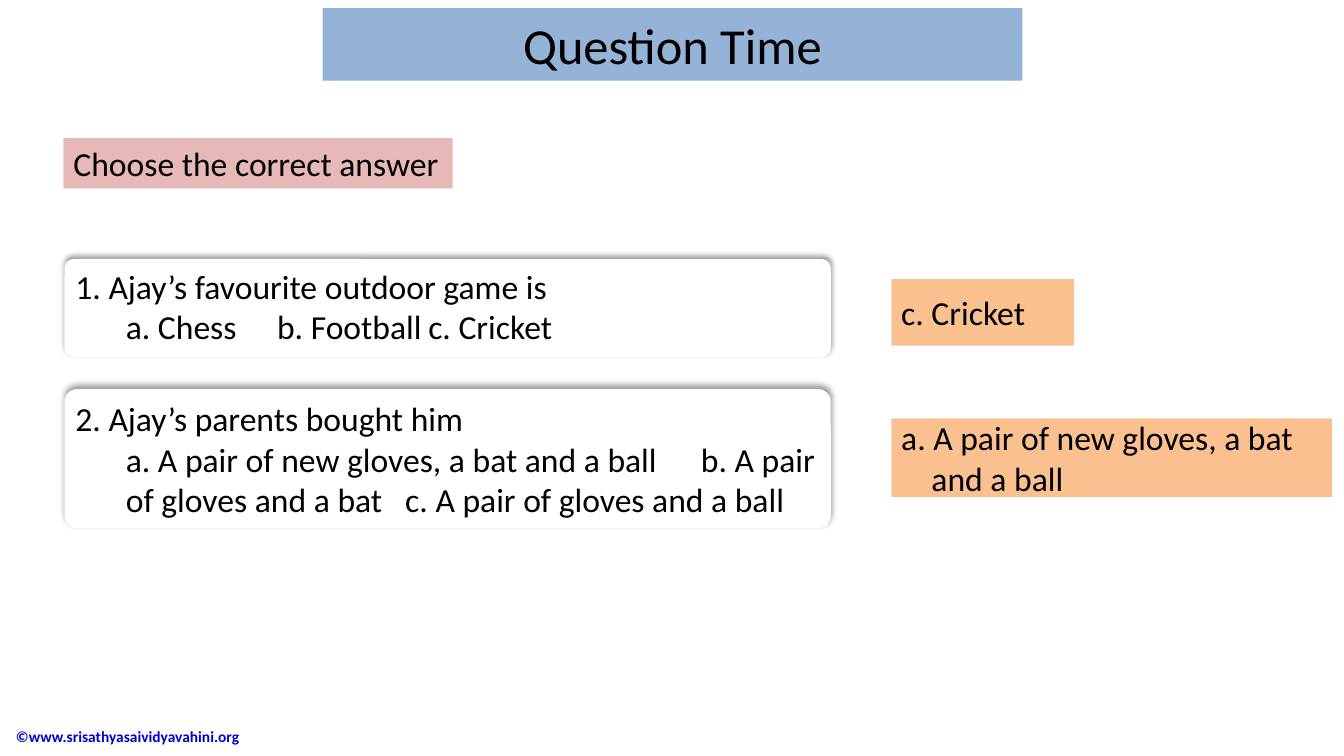
from lxml.etree import SubElement
from pptx import Presentation
from pptx.dml.color import RGBColor
from pptx.enum.shapes import MSO_SHAPE
from pptx.enum.text import MSO_ANCHOR, PP_ALIGN
from pptx.oxml import parse_xml
from pptx.oxml.ns import nsdecls, qn
from pptx.util import Inches, Pt

deck = Presentation()
deck.slide_width, deck.slide_height = Inches(13.33), Inches(7.5)
slide = deck.slides.add_slide(deck.slide_layouts[6])


def panel(shapes, kind, box, fill):
    shape = shapes.add_shape(kind, *map(Inches, box))
    shape.shadow.inherit = False
    shape.fill.solid()
    shape.fill.fore_color.rgb = RGBColor.from_string(fill)
    shape.line.fill.background()
    return shape


def style(shape, size, color, anchor, indents, wrap=True):
    frame = shape.text_frame
    frame.word_wrap = wrap
    frame.vertical_anchor = anchor
    for par, (left, first) in zip(frame.paragraphs, indents):
        par.alignment = PP_ALIGN.LEFT
        props = par._p.get_or_add_pPr()
        props.set("marL", str(Inches(left)))
        props.set("indent", str(Inches(first)))
        for run in par.runs:
            run.font.name = "Calibri"
            run.font.size = Pt(size)
            run.font.color.rgb = RGBColor.from_string(color)


hang = (0.5, -0.5)

footer = slide.shapes.add_textbox(*map(Inches, (-0.44, 7.1, 4.03, 0.41)))
footer.text_frame.text = "©www.srisathyasaividyavahini.org"
style(footer, 11, "0000CC", MSO_ANCHOR.MIDDLE, [(0.5, 0)])
footer.text_frame.paragraphs[0].runs[0].font.bold = True

title = panel(slide.shapes, MSO_SHAPE.RECTANGLE, (3.2, 0.08, 6.94, 0.72), "95B3D7")
title.text_frame.text = "Question Time"
style(title, 36, "000000", MSO_ANCHOR.MIDDLE, [(0, 0)])
title.text_frame.paragraphs[0].alignment = PP_ALIGN.CENTER

task = panel(slide.shapes, MSO_SHAPE.RECTANGLE, (0.63, 1.37, 3.86, 0.5), "E6B9B8")
task.text_frame.text = "Choose the correct answer"
style(task, 24, "000000", MSO_ANCHOR.TOP, [(0, 0)], wrap=False)

cards = [
    ((0.64, 2.57, 7.6, 0.97), (0.65, 2.59, 7.6, 1.32),
     "1. Ajay’s favourite outdoor game is",
     [("\ta. Chess\tb. Football\tc. Cricket", 0)]),
    ((0.64, 3.86, 7.6, 1.38), (0.65, 3.9, 7.56, 1.72),
     "2. Ajay’s parents bought him",
     [("\ta. A pair of new gloves, a bat and a ball", 0), (" ", 26),
      ("b. A pair of gloves and a bat", 0), (" ", 11),
      ("c. A pair of gloves and a ball", 0)]),
]
for box, area, question, parts in cards:
    group = slide.shapes.add_group_shape()
    card = panel(group.shapes, MSO_SHAPE.ROUNDED_RECTANGLE, box, "FFFFFF")
    card.adjustments[0] = 0.09
    effects = card._element.spPr.find(qn("a:effectLst"))
    shade = SubElement(effects, qn("a:outerShdw"), blurRad=str(Pt(4)),
                       dist=str(Pt(3)), dir="16200000", rotWithShape="0")
    shade.append(parse_xml(f'<a:srgbClr {nsdecls("a")} val="000000">'
                           '<a:alpha val="40000"/></a:srgbClr>'))
    text = group.shapes.add_textbox(*map(Inches, area))
    text.text_frame.text = question
    choices = text.text_frame.add_paragraph()
    for words, gap in parts:
        run = choices.add_run()
        run.text = words
        if gap:
            run._r.get_or_add_rPr().set("spc", str(gap * 100))
    style(text, 24, "000000", MSO_ANCHOR.TOP, [hang, hang])

answers = [
    ((8.84, 2.77, 1.81, 0.66), "c. Cricket"),
    ((8.84, 4.15, 4.37, 0.78), "a. A pair of new gloves, a bat\nand a ball"),
]
for box, words in answers:
    answer = panel(slide.shapes, MSO_SHAPE.RECTANGLE, box, "FAC090")
    answer.text_frame.text = words
    style(answer, 24, "000000", MSO_ANCHOR.MIDDLE, [hang, (0.3, 0)])

deck.save("out.pptx")
